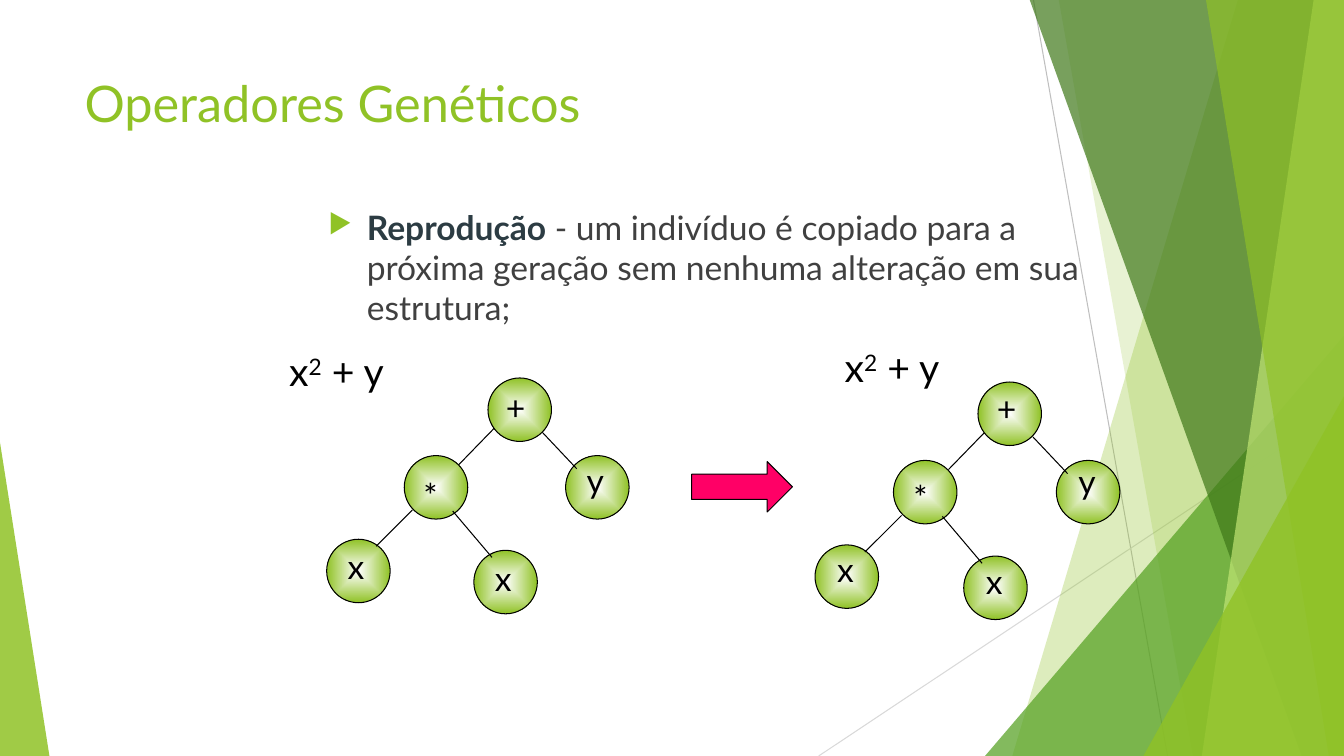
from dataclasses import dataclass
from lxml import etree
from pptx import Presentation, util as u
from pptx.dml.color import RGBColor
from pptx.enum import shapes as sh, text as tx
from pptx.oxml import ns


@dataclass(frozen=True)
class Theme:
    font: str = "Lato"
    paper: str = "FFFFFF"
    ink: str = "000000"
    body: str = "404040"
    strong: str = "2C3C43"
    lime: str = "90C226"
    pale: str = "C0E474"
    green: str = "54A021"
    deep: str = "3F7819"
    pink: str = "FF0066"
    rules: tuple = ("BFBFBF", "D9D9D9")
    title: int = 36
    sum: int = 28
    text: int = 24
    line: float = 0.75


T = Theme()
SIZE = 0.63
NODES = [
    ("+", 4.84, 3.75, 0.08, 0.04),
    ("*", 4.01, 4.52, 0.09, 0.14),
    ("x", 4.70, 5.46, 0.11, 0.03),
    ("x", 3.24, 5.35, 0.11, 0.02),
    ("y", 5.61, 4.52, 0.11, -0.01),
]
EDGES = [
    (4.90, 4.25, 4.55, 4.61),
    (5.38, 4.29, 5.72, 4.65),
    (4.09, 5.06, 3.73, 5.42),
    (4.49, 5.07, 4.88, 5.53),
]
BANDS = [
    (12.28, 10.04, T.lime, 30),
    (10.50, 11.83, T.lime, 20),
    (10.21, 12.91, T.deep, 70),
    (13.03, 11.92, T.pale, 70),
    (11.96, 13.18, T.lime, 65),
]


def rgb(code):
    return RGBColor.from_string(code)


def box(*sides):
    return [u.Inches(side) for side in sides]


def sub(parent, tag, **attrs):
    return etree.SubElement(parent, ns.qn(tag), attrs)


def paint(shape, color, alpha=100, edge=None):
    shape.shadow.inherit = False
    shape.fill.solid()
    shape.fill.fore_color.rgb = rgb(color)
    if alpha < 100:
        tone = shape.element.spPr.find(ns.qn("a:solidFill"))[0]
        sub(tone, "a:alpha", val=str(alpha * 1000))
    if edge:
        shape.line.color.rgb = rgb(edge)
        shape.line.width = u.Pt(T.line)
    else:
        shape.line.fill.background()


def glow(shape):
    old = shape.element.spPr.find(ns.qn("a:solidFill"))
    grad = etree.Element(ns.qn("a:gradFill"), rotWithShape="1")
    stops = sub(grad, "a:gsLst")
    for pos, color in ((0, T.paper), (100, T.lime)):
        stop = sub(stops, "a:gs", pos=str(pos * 1000))
        sub(stop, "a:srgbClr", val=color)
    way = sub(grad, "a:path", path="shape")
    sub(way, "a:fillToRect", **dict.fromkeys("ltrb", "50000"))
    old.getparent().replace(old, grad)


def rule(shapes, ends, color):
    line = shapes.add_connector(sh.MSO_CONNECTOR.STRAIGHT, *box(*ends))
    line.line.color.rgb = rgb(color)
    line.line.width = u.Pt(T.line)
    sub(line.element.spPr, "a:effectLst")


def wedge(shapes, place, tip, color, alpha):
    shape = shapes.add_shape(sh.MSO_SHAPE.ISOSCELES_TRIANGLE, *box(*place))
    shape.adjustments[0] = tip
    paint(shape, color, alpha)


def band(shapes, top, foot, color, alpha):
    pen = shapes.build_freeform(*box(top, -0.01))
    pen.add_line_segments([box(13.33, -0.01), box(13.33, 7.5), box(foot, 7.5)])
    paint(pen.convert_to_shape(), color, alpha)


def write(shapes, place, parts, size, color):
    label = shapes.add_textbox(*box(*place))
    frame = label.text_frame
    frame.word_wrap = True
    para = frame.paragraphs[0]
    for part in parts:
        run = para.add_run()
        run.text = part
        run.font.name = T.font
        run.font.size = u.Pt(size)
        run.font.color.rgb = rgb(color)
    return frame


def decor(shapes):
    group = shapes.add_group_shape().shapes
    rule(group, (10.25, 0, 11.58, 7.5), T.rules[0])
    rule(group, (13.33, 4.03, 8.12, 7.5), T.rules[1])
    for item in BANDS[:2]:
        band(group, *item)
    wedge(group, (9.77, 3.33, 3.56, 4.17), 1, T.green, 72)
    for item in BANDS[2:]:
        band(group, *item)
    wedge(group, (11.34, 3.93, 1.99, 3.57), 1, T.lime, 80)
    wedge(group, (0, 4.39, 0.49, 3.11), 0, T.lime, 85)


def point(shapes):
    parts = ("Reprodução", " - um indivíduo é copiado para a próxima geração "
             "sem nenhuma alteração em sua estrutura;")
    frame = write(shapes, (3.16, 2, 8, 1.36), parts, T.text, T.body)
    frame.auto_size = tx.MSO_AUTO_SIZE.TEXT_TO_FIT_SHAPE
    para = frame.paragraphs[0]
    para.space_before = u.Pt(10)
    head = para.runs[0].font
    head.bold = True
    head.color.rgb = rgb(T.strong)
    props = para._p.get_or_add_pPr()
    dent = u.Inches(0.38)
    props.set("marL", str(dent))
    props.set("indent", str(-dent))
    sub(sub(props, "a:buClr"), "a:srgbClr", val=T.lime)
    sub(props, "a:buSzPct", val="80000")
    sub(props, "a:buChar", char="▶")


def sum_up(shapes, left, top):
    frame = write(shapes, (left, top, 1.44, 0.57), ("x", "2", " + y"), T.sum, T.ink)
    frame.paragraphs[0].runs[1].font._element.set("baseline", "30000")


def tree(shapes, left, top, scale=1, nudge=(0, 0)):
    group = shapes.add_group_shape().shapes
    root = NODES[0]

    def move(x, y):
        return left + (x - root[1]) * scale, top + (y - root[2]) * scale

    for sign, x, y, right, down in NODES:
        x, y = move(x, y)
        node = group.add_shape(sh.MSO_SHAPE.OVAL, *box(x, y, SIZE, SIZE))
        paint(node, T.lime, edge=T.ink)
        glow(node)
        place = (x + right + nudge[0], y + down + nudge[1], 0.56, 0.5)
        write(group, place, (sign,), T.text, T.ink)
    for edge in EDGES:
        rule(group, move(*edge[:2]) + move(*edge[2:]), T.ink)


def main():
    deck = Presentation()
    deck.slide_width, deck.slide_height = box(13.33, 7.5)
    slide = deck.slides.add_slide(deck.slide_layouts[6])
    slide.background.fill.solid()
    slide.background.fill.fore_color.rgb = rgb(T.paper)
    shapes = slide.shapes
    decor(shapes)
    write(shapes, (0.74, 0.67, 9.4, 1.44), ("Operadores Genéticos",), T.title, T.lime)
    point(shapes)
    tree(shapes, 4.84, 3.75)
    sum_up(shapes, 2.77, 3.4)
    arrow = shapes.add_shape(sh.MSO_SHAPE.RIGHT_ARROW, *box(6.86, 4.58, 1, 0.5))
    paint(arrow, T.pink, edge=T.ink)
    sum_up(shapes, 8.28, 3.36)
    tree(shapes, 9.7, 3.79, 1.01, (0.01, -0.03))
    deck.save("out.pptx")


if __name__ == "__main__":
    main()
